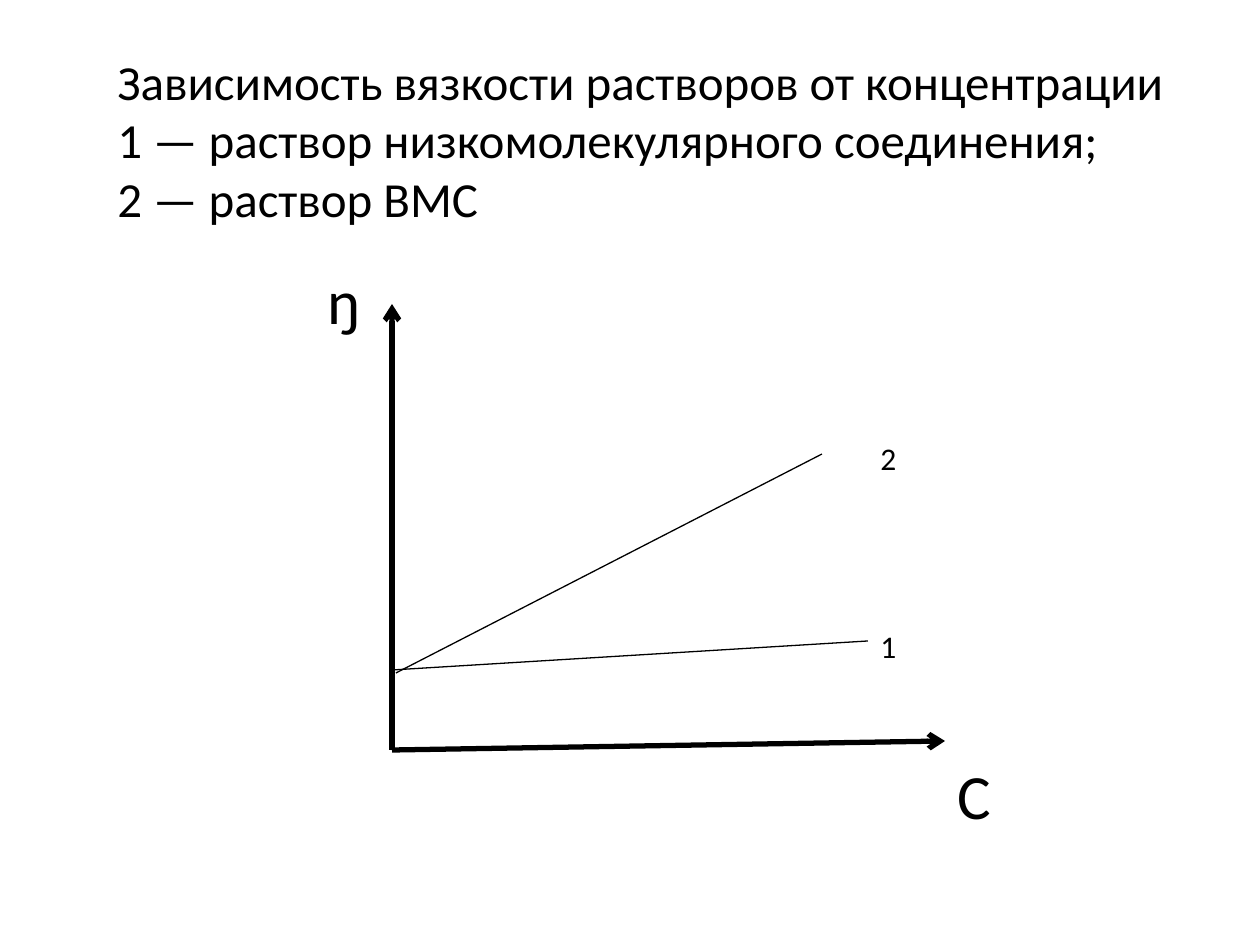
from lxml import etree
from pptx import Presentation
from pptx import util as u
from pptx.dml.color import RGBColor
from pptx.enum import shapes, text
from pptx.oxml.ns import qn

BLACK = RGBColor(0, 0, 0)
FONT = "Calibri"
PX = 914400 / 126

HEADING = [
    "Зависимость вязкости растворов от концентрации",
    "1 — раствор низкомолекулярного соединения;",
    "2 — раствор ВМС",
]
ORIGIN = (392, 750)
AXIS_ENDS = [(945, 741), (392, 304)]
CURVES = [((392, 670), (868, 641)), ((396, 673), (822, 454))]
LABELS = [
    ("ŋ", (315, 255, 92, 89), 36, True),
    ("1", (868, 621, 77, 50), 18, True),
    ("2", (868, 433, 62, 50), 18, True),
    ("С", (945, 750, 59, 89), 36, False),
]


def px(*lengths):
    return [u.Emu(round(length * PX)) for length in lengths]


def add_text(slide, lines, *, box, size, wrap=True):
    frame = slide.shapes.add_textbox(*px(*box)).text_frame
    frame.word_wrap = wrap
    frame.auto_size = text.MSO_AUTO_SIZE.SHAPE_TO_FIT_TEXT
    frame.text = "\n".join(lines)
    for paragraph in frame.paragraphs:
        font = paragraph.font
        font.name, font.size = FONT, u.Pt(size)
        font.color.rgb = BLACK


def add_line(slide, start, end, *, width, arrow=False):
    segment = slide.shapes.add_connector(
        shapes.MSO_CONNECTOR.STRAIGHT, *px(*start, *end))
    segment.line.color.rgb = BLACK
    segment.line.width = u.Pt(width)
    properties = segment._element.spPr
    if arrow:
        etree.SubElement(properties.find(qn("a:ln")), qn("a:tailEnd"), type="arrow")
    etree.SubElement(properties, qn("a:effectLst"))


def main():
    deck = Presentation()
    deck.slide_width, deck.slide_height = px(1260, 945)
    slide = deck.slides.add_slide(deck.slide_layouts[6])
    add_text(slide, HEADING, box=(105, 45, 1155, 190), size=28)
    for end in AXIS_ENDS:
        add_line(slide, ORIGIN, end, width=3, arrow=True)
    for start, end in CURVES:
        add_line(slide, start, end, width=0.75)
    for label, box, size, wrap in LABELS:
        add_text(slide, [label], box=box, size=size, wrap=wrap)
    deck.save("out.pptx")


if __name__ == "__main__":
    main()
